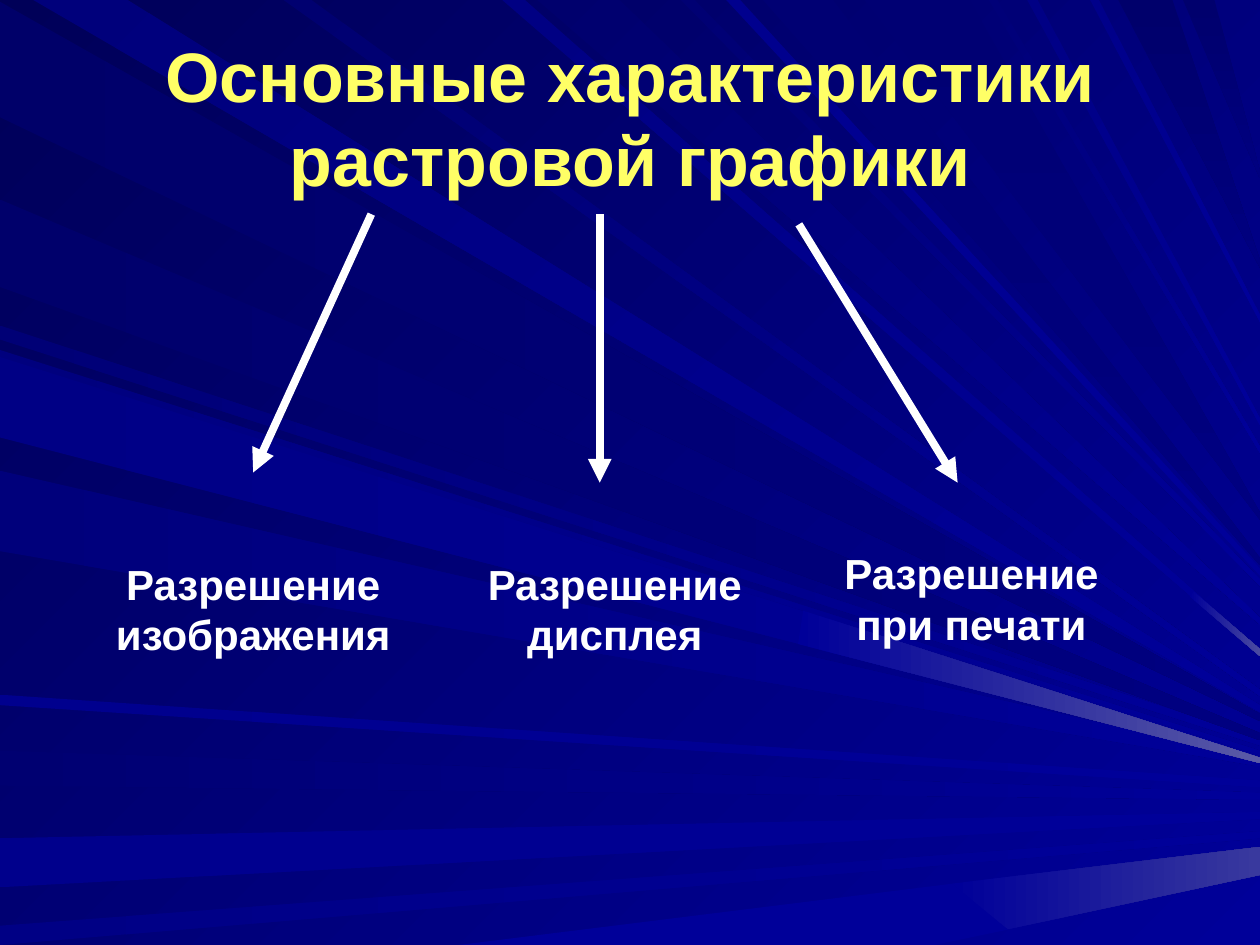
from lxml.etree import SubElement
from pptx import Presentation
from pptx.dml.color import RGBColor
from pptx.enum.shapes import MSO_CONNECTOR
from pptx.enum.text import MSO_ANCHOR, MSO_AUTO_SIZE, PP_ALIGN
from pptx.oxml.ns import qn
from pptx.util import Pt

FONT = "Arial"
WHITE = "FFFFFF"
YELLOW = "FFFF66"
NAVY = "000080"
BLUE = "000099"
WIDTH, HEIGHT = 720, 540
TIP = 2

LEFT_RAYS = [
    ("000069", NAVY, 1, 67, 410),
    ("000071", BLUE, 429, 449, 455),
    ("00008C", BLUE, 479, 507, 466),
    ("000085", BLUE, 529, 540, 477),
    ("000076", BLUE, 186, 194, 424),
    ("00006B", NAVY, 114, 164, 421),
    ("00007E", BLUE, 200, 246, 431),
    ("00007B", BLUE, 269, 315, 436),
    ("00008E", BLUE, 397, 403, 448),
    ("000085", BLUE, 204, 250, 434),
]
TOP_RAYS = [
    ("00007B", BLUE, 19, 73, 405),
    ("000083", BLUE, 287, 300, 373),
    ("00006D", BLUE, 307, 354, 355),
    ("000073", BLUE, 389, 397, 333),
    ("000073", NAVY, 436, 476, 321),
    ("00006B", NAVY, 639, 670, 151),
    ("00006D", NAVY, 676, 694, 100),
    ("000070", BLUE, 162, 178, 396),
    ("00008E", BLUE, 415, 423, 327),
    ("000073", NAVY, 494, 554, 295),
    ("000078", BLUE, 565, 570, 257),
    ("000085", BLUE, 587, 593, 241),
    ("00008A", BLUE, 623, 628, 182),
]
GLINTS = [
    (BLUE, [(534, 540), (577, 531), (544, 505), (262, 540)]),
    ("39399E", [(720, 500), (720, 484), (544, 505), (576, 531)]),
    ("5A5AA6", [(720, 433), (459, 349), (456, 368), (720, 436)]),
    ("4A4AA1", [(720, 375), (720, 371), (682, 338), (680, 341)]),
]

BRANCHES = [
    ("Разрешение изображения", (48.2, 315.4, 193), (164, -193), (96.5, -45.4)),
    ("Разрешение дисплея", (263.5, 315.4, 175.7), (79.2, -193), (79.2, -39.6)),
    ("Разрешение при печати", (473, 309.6, 164.2), (-16.5, -181.4), (74.2, -33.8)),
]


def color(value):
    return RGBColor.from_string(value)


def paint(fill, start, end, angle):
    if start == end:
        fill.solid()
        fill.fore_color.rgb = color(start)
        return
    fill.gradient()
    fill.gradient_angle = (360 - angle) % 360
    for stop, position, value in zip(fill.gradient_stops, (0, 1), (start, end)):
        stop.position = position
        stop.color.rgb = color(value)


def write(paragraph, text, size, value):
    paragraph.alignment = PP_ALIGN.CENTER
    run = paragraph.add_run()
    run.text = text
    run.font.name = FONT
    run.font.size = Pt(size)
    run.font.bold = True
    run.font.color.rgb = color(value)


def add_ray(group, corners, start, end, angle):
    builder = group.shapes.build_freeform(*corners[0], scale=Pt(1))
    builder.add_line_segments(corners[1:], close=True)
    ray = builder.convert_to_shape()
    ray.shadow.inherit = False
    ray.line.fill.background()
    paint(ray.fill, start, end, angle)


def add_backdrop(slide, width):
    paint(slide.background.fill, "000058", BLUE, 45)
    group = slide.shapes.add_group_shape()
    for start, end, near, far, tip in LEFT_RAYS:
        corners = [(0, near), (0, far), (width, tip + TIP), (width, tip - TIP)]
        add_ray(group, corners, start, end, 0)
    for start, end, near, far, tip in TOP_RAYS:
        corners = [(near, 0), (far, 0), (width, tip - TIP), (width, tip + TIP)]
        add_ray(group, corners, start, end, 90 if end == NAVY else 45)
    for end, corners in GLINTS:
        add_ray(group, corners, BLUE, end, 0)
    slide.shapes.title.element.addprevious(group.element)


def add_title(slide, left, top, width, height):
    title = slide.shapes.title
    title.left, title.top = Pt(left), Pt(top)
    title.width, title.height = Pt(width), Pt(height)
    frame = title.text_frame
    frame.word_wrap = True
    frame.vertical_anchor = MSO_ANCHOR.MIDDLE
    write(frame.paragraphs[0], "Основные характеристики растровой графики", 40, YELLOW)


def add_arrow(slide, *ends):
    arrow = slide.shapes.add_connector(
        MSO_CONNECTOR.STRAIGHT, *(Pt(value) for value in ends)
    )
    arrow.line.color.rgb = color(WHITE)
    arrow.line.width = Pt(4.5)
    SubElement(arrow.line._get_or_add_ln(), qn("a:tailEnd"), type="triangle")
    SubElement(arrow.element.spPr, qn("a:effectLst"))


def add_branch(slide, text, box, start, end):
    left, top, width = box
    add_arrow(slide, left + start[0], top + start[1], left + end[0], top + end[1])
    label = slide.shapes.add_textbox(Pt(left), Pt(top), Pt(width), Pt(64.8))
    frame = label.text_frame
    frame.word_wrap = True
    frame.auto_size = MSO_AUTO_SIZE.SHAPE_TO_FIT_TEXT
    write(frame.paragraphs[0], text, 24, WHITE)


def main():
    presentation = Presentation()
    presentation.slide_width, presentation.slide_height = Pt(WIDTH), Pt(HEIGHT)
    slide = presentation.slides.add_slide(presentation.slide_layouts[5])
    add_backdrop(slide, WIDTH)
    add_title(slide, 36, 21.6, 648, 90)
    for branch in BRANCHES:
        add_branch(slide, *branch)
    presentation.save("out.pptx")


if __name__ == "__main__":
    main()
